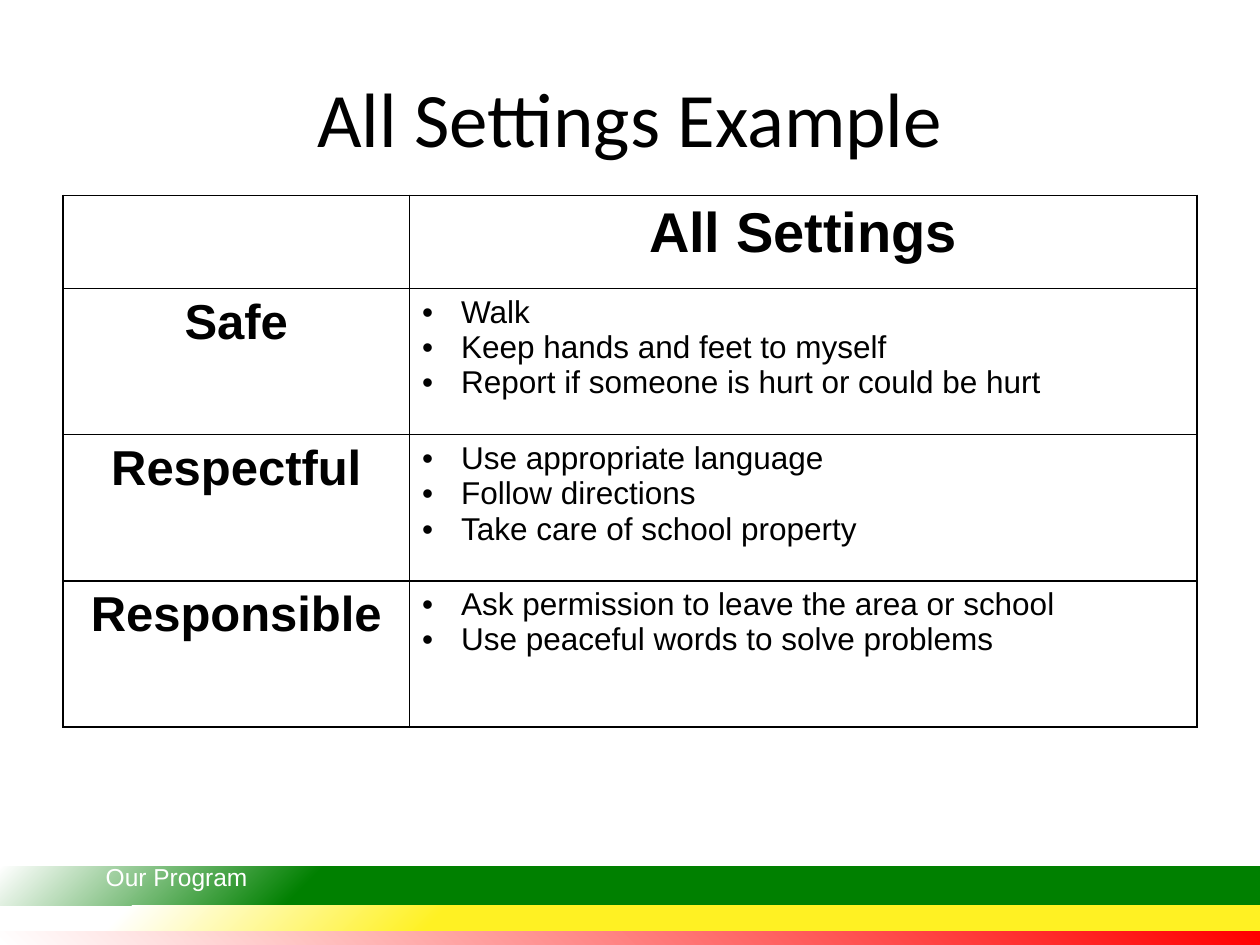
from lxml import etree
from pptx import Presentation
from pptx.dml.color import RGBColor
from pptx.enum import shapes, text
from pptx.oxml import parse_xml
from pptx.oxml.ns import nsdecls, qn
from pptx.util import Inches, Pt

BLACK = RGBColor(0x00, 0x00, 0x00)
WHITE = RGBColor(0xFF, 0xFF, 0xFF)
RED = RGBColor(0xFF, 0x00, 0x00)
GREEN = RGBColor(0x00, 0x80, 0x00)
YELLOW = RGBColor(0xFF, 0xF1, 0x23)

TITLE = "All Settings Example"
HEADING = "All Settings"
FOOTER = "Our Program"
EXPECTATIONS = [
    ("Safe", ["Walk", "Keep hands and feet to myself",
              "Report if someone is hurt or could be hurt"]),
    ("Respectful", ["Use appropriate language", "Follow directions",
                    "Take care of school property"]),
    ("Responsible", ["Ask permission to leave the area or school",
                     "Use peaceful words to solve problems"]),
]
BANDS = [
    (GREEN, 0.31, 75, 100, "b"),
    (YELLOW, 0.20, 65, 90, "b"),
    (RED, 0.12, 0, 100, "t"),
]
W, H = 10, 7.5
MARGIN = W * 0.05
TABLE_TOP = 1.55
COLS = [2.75, 6.25]
ROWS = [0.74] + [1.16] * len(EXPECTATIONS)
BAND_TOP = 6.88


def write(tf, lines, size=18, font="Arial", color=BLACK, bold=False,
          align=text.PP_ALIGN.LEFT, bullet=False):
    for i, line in enumerate(lines):
        p = tf.add_paragraph() if i else tf.paragraphs[0]
        p.alignment = align
        r = p.add_run()
        r.text = line
        r.font.size, r.font.name, r.font.bold = Pt(size), font, bold
        r.font.color.rgb = color
        if bullet:
            pPr = p._p.get_or_add_pPr()
            pPr.set("marL", str(Inches(0.31)))
            pPr.set("indent", str(-Inches(0.31)))
            etree.SubElement(pPr, qn("a:buFont")).set("typeface", "Arial")
            etree.SubElement(pPr, qn("a:buChar")).set("char", "•")


def add_band(slide, top, height, color, start, end, focus):
    sp = slide.shapes.add_shape(shapes.MSO_SHAPE.RECTANGLE, 0, Inches(top),
                                Inches(W), Inches(height))
    sp.shadow.inherit = False
    sp.line.fill.background()
    edge = 't="100000"' if focus == "b" else 'b="100000"'
    sp._element.spPr.find(qn("a:prstGeom")).addnext(parse_xml(
        f'<a:gradFill {nsdecls("a")} rotWithShape="1"><a:gsLst>'
        f'<a:gs pos="{start * 1000}"><a:srgbClr val="{color}"/></a:gs>'
        f'<a:gs pos="{end * 1000}"><a:srgbClr val="{WHITE}"/></a:gs></a:gsLst>'
        f'<a:path path="circle"><a:fillToRect l="100000" {edge}/></a:path>'
        '</a:gradFill>'))


def add_footer(slide):
    sp = slide.shapes.add_textbox(Inches(0.74), Inches(6.79), Inches(1.92), Inches(0.4))
    sp.text_frame.word_wrap = True
    write(sp.text_frame, [FOOTER], size=14, color=WHITE)
    rPr = sp.text_frame.paragraphs[0].runs[0].font._element
    rPr.find(qn("a:solidFill")).addnext(parse_xml(
        f'<a:effectLst {nsdecls("a")}><a:outerShdw blurRad="38100" dist="38100" '
        f'dir="2700000"><a:srgbClr val="{BLACK}"><a:alpha val="43000"/>'
        '</a:srgbClr></a:outerShdw></a:effectLst>'))


def style_cell(cell):
    cell.fill.background()
    tcPr = cell._tc.get_or_add_tcPr()
    for i, side in enumerate("LRTB"):
        tcPr.insert(i, parse_xml(
            f'<a:ln{side} {nsdecls("a")} w="{Pt(1)}"><a:solidFill>'
            f'<a:srgbClr val="{BLACK}"/></a:solidFill></a:ln{side}>'))


def add_settings_table(slide):
    table = slide.shapes.add_table(
        len(ROWS), len(COLS), Inches(MARGIN), Inches(TABLE_TOP),
        Inches(sum(COLS)), Inches(sum(ROWS))).table
    table.first_row = table.horz_banding = False
    for col, width in zip(table.columns, COLS):
        col.width = Inches(width)
    for row, height in zip(table.rows, ROWS):
        row.height = Inches(height)
    for cell in table.iter_cells():
        style_cell(cell)
    center = text.PP_ALIGN.CENTER
    write(table.cell(0, 1).text_frame, [HEADING], size=32, bold=True, align=center)
    for i, (name, rules) in enumerate(EXPECTATIONS, 1):
        write(table.cell(i, 0).text_frame, [name], size=28, bold=True, align=center)
        write(table.cell(i, 1).text_frame, rules, bullet=True)


def main():
    prs = Presentation()
    prs.slide_width, prs.slide_height = Inches(W), Inches(H)
    slide = prs.slides.add_slide(prs.slide_layouts[5])
    top = BAND_TOP
    for color, height, start, end, focus in BANDS:
        add_band(slide, top, height, color, start, end, focus)
        top += height
    add_footer(slide)
    title = slide.shapes.title
    title.left, title.top = Inches(MARGIN), Inches(0.3)
    title.width, title.height = Inches(W - 2 * MARGIN), Inches(1.25)
    title.text_frame.vertical_anchor = text.MSO_ANCHOR.MIDDLE
    write(title.text_frame, [TITLE], size=44, font="Calibri",
          align=text.PP_ALIGN.CENTER)
    add_settings_table(slide)
    prs.save("out.pptx")


if __name__ == "__main__":
    main()
